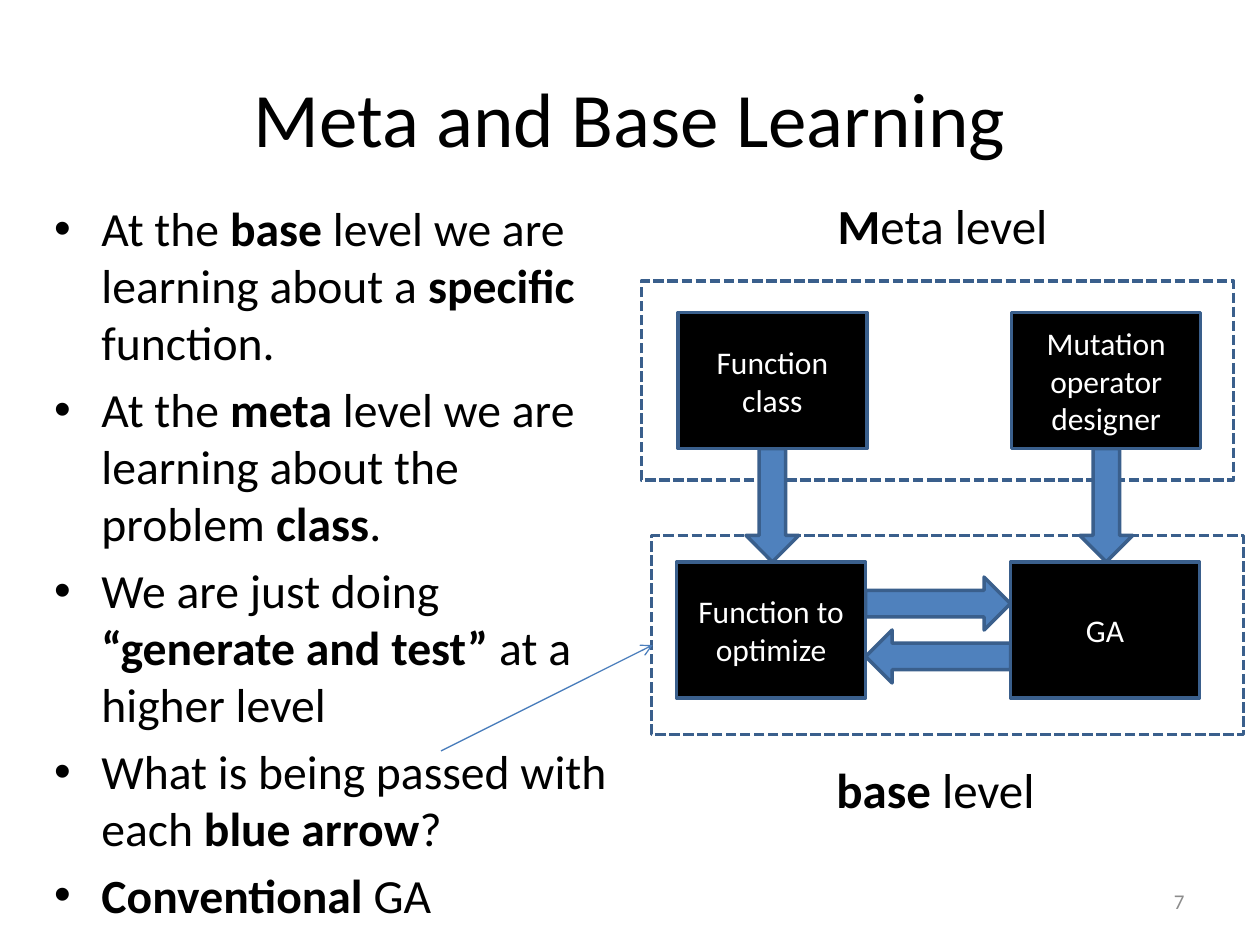
import pptx
import pptx.util
import pptx.dml.color
import pptx.enum.dml
import pptx.enum.shapes
import pptx.enum.text
import pptx.oxml

Inches, Pt = pptx.util.Inches, pptx.util.Pt
SHAPE = pptx.enum.shapes.MSO_SHAPE
ALIGN = pptx.enum.text.PP_ALIGN
ANCHOR = pptx.enum.text.MSO_ANCHOR
FIT = pptx.enum.text.MSO_AUTO_SIZE

# Content: runs are (text, bold)
TITLE = "Meta and Base Learning"
BULLETS = [
    [("At the ", False), ("base", True), (" level we are learning about a ", False),
     ("specific", True), (" function.", False)],
    [("At the ", False), ("meta", True),
     (" level we are learning about the problem ", False), ("class", True), (".", False)],
    [("We are just doing ", False), ("“generate and test” ", True),
     ("at a higher level", False)],
    [("What is being passed with each ", False), ("blue arrow", True), ("?", False)],
    [("Conventional", True), (" GA", False)],
]
BOXES = [["Function class", "Mutation operator designer"],
         ["Function to optimize", "GA"]]
LEVEL_LABELS = [
    ((6.55, 1.5, 1.88, 0.57), [("M", True), ("eta level", False)]),
    ((6.54, 5.98, 1.79, 0.57), [("base", True), (" level", False)]),
]
LEVEL_FRAMES = [(5.09, 2.23, 4.7, 1.58), (5.17, 4.25, 4.7, 1.58)]
PAGE_NUMBER = [("7", False)]

COLORS = {"text": "000000", "box": "000000", "box text": "FFFFFF", "arrow": "4F81BD",
          "outline": "3A5F8C", "pointer": "4B7EBC", "page": "8C8C8C"}
FONT = "Calibri"

# Diagram grid, in inches
COLUMNS, ROWS = (5.37, 8.02), (2.48, 4.46)
ROW_SHIFT = 0.01        # the upper row sits slightly to the right
BOX_W, BOX_H = 1.5, 1.08
ARROW_W = 0.42


def rgb(name):
    return pptx.dml.color.RGBColor.from_string(COLORS[name])


def place(shape, left, top, width, height):
    values = {"left": left, "top": top, "width": width, "height": height}
    for key, value in values.items():
        setattr(shape, key, Inches(value))


def write(paragraph, runs, size, color="text", align=None):
    paragraph.alignment = align
    for text, bold in runs:
        run = paragraph.add_run()
        run.text = text
        for key, value in {"name": FONT, "size": Pt(size), "bold": bold}.items():
            setattr(run.font, key, value)
        run.font.color.rgb = rgb(color)


def add_block(slide, kind, at, fill=None):
    block = slide.shapes.add_shape(kind, *map(Inches, at))
    block.shadow.inherit = False
    if fill:
        block.fill.solid()
        block.fill.fore_color.rgb = rgb(fill)
    else:
        block.fill.background()
    block.line.color.rgb = rgb("outline")
    block.line.width = Pt(2)
    return block


def add_label(slide, at, runs, size, color="text", align=None, wrap=False):
    label = slide.shapes.add_textbox(*map(Inches, at))
    label.text_frame.word_wrap = wrap
    write(label.text_frame.paragraphs[0], runs, size, color, align)
    return label


def add_block_arrow(slide, center_x, center_y, length, rotation=0):
    at = (center_x - ARROW_W / 2, center_y - length / 2, ARROW_W, length)
    add_block(slide, SHAPE.DOWN_ARROW, at, "arrow").rotation = rotation


def add_pointer(slide, start, end):
    pointer = slide.shapes.add_connector(
        pptx.enum.shapes.MSO_CONNECTOR.STRAIGHT, *map(Inches, start + end))
    pointer.line.color.rgb = rgb("pointer")
    pointer.line.width = Pt(0.75)
    ns = 'xmlns:a="http://schemas.openxmlformats.org/drawingml/2006/main"'
    pointer.line._get_or_add_ln().append(
        pptx.oxml.parse_xml(f'<a:tailEnd {ns} type="arrow"/>'))
    pointer._element.spPr.append(pptx.oxml.parse_xml(f"<a:effectLst {ns}/>"))


def main():
    deck = pptx.Presentation()
    deck.slide_width, deck.slide_height = Inches(10), Inches(7.5)
    slide = deck.slides.add_slide(deck.slide_layouts[1])

    # Level frames
    for at in LEVEL_FRAMES:
        frame = add_block(slide, SHAPE.RECTANGLE, at)
        frame.line.dash_style = pptx.enum.dml.MSO_LINE.SQUARE_DOT

    # Title and bullets
    title, body = slide.placeholders
    place(title, 0.5, 0.3, 9, 1.25)
    title.text_frame.vertical_anchor = ANCHOR.MIDDLE
    write(title.text_frame.paragraphs[0], [(TITLE, False)], 44, align=ALIGN.CENTER)
    place(body, 0.33, 1.53, 4.75, 4.93)
    body.text_frame.auto_size = FIT.NONE
    for index, runs in enumerate(BULLETS):
        frame = body.text_frame
        bullet = frame.add_paragraph() if index else frame.paragraphs[0]
        write(bullet, runs, 27.2)

    add_pointer(slide, (3.5, 5.96), (5.18, 5.12))

    # Downward arrows from the meta row to the base row
    gap_top, gap_bottom = ROWS[0] + BOX_H, ROWS[1]
    for left in COLUMNS:
        add_block_arrow(slide, left + BOX_W / 2 + ROW_SHIFT,
                        (gap_top + gap_bottom) / 2, gap_bottom - gap_top)

    # Exchange between the two base boxes
    gap_left, gap_right = COLUMNS[0] + BOX_W, COLUMNS[1]
    base_middle = ROWS[1] + BOX_H / 2
    for offset, rotation in ((-ARROW_W / 2, 270), (ARROW_W / 2, 90)):
        add_block_arrow(slide, (gap_left + gap_right) / 2, base_middle + offset,
                        gap_right - gap_left, rotation)

    # Boxes
    for row, (top, names) in enumerate(zip(ROWS, BOXES)):
        for left, name in zip(COLUMNS, names):
            shift = ROW_SHIFT if row == 0 else 0
            box = add_block(slide, SHAPE.RECTANGLE,
                            (left + shift, top, BOX_W, BOX_H), "box")
            box.text_frame.word_wrap = True
            box.text_frame.vertical_anchor = ANCHOR.MIDDLE
            write(box.text_frame.paragraphs[0], [(name, False)], 18,
                  "box text", ALIGN.CENTER)

    # Level labels and page number
    for at, runs in LEVEL_LABELS:
        add_label(slide, at, runs, 28).text_frame.auto_size = FIT.SHAPE_TO_FIT_TEXT
    page = add_label(slide, (7.17, 6.95, 2.33, 0.4), PAGE_NUMBER, 12, "page",
                     ALIGN.RIGHT, wrap=True)
    page.text_frame.vertical_anchor = ANCHOR.MIDDLE

    deck.save("out.pptx")


if __name__ == "__main__":
    main()
